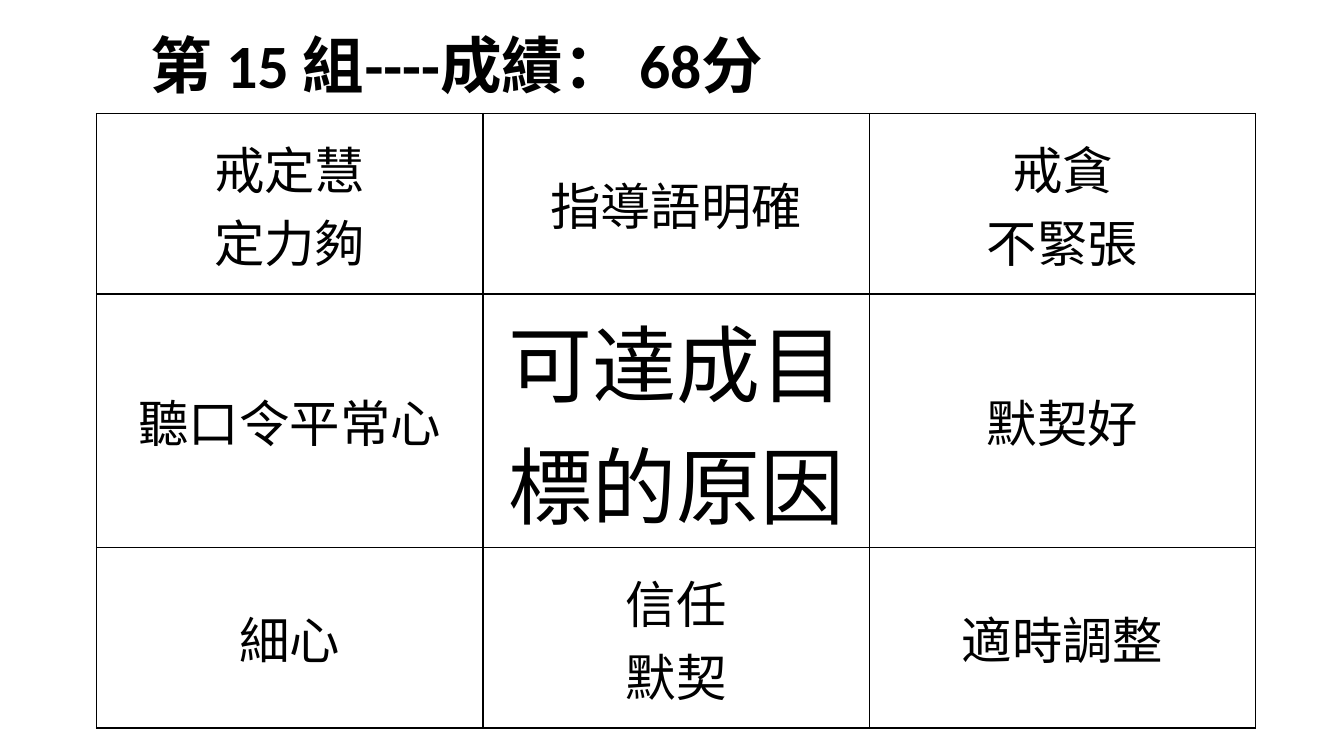
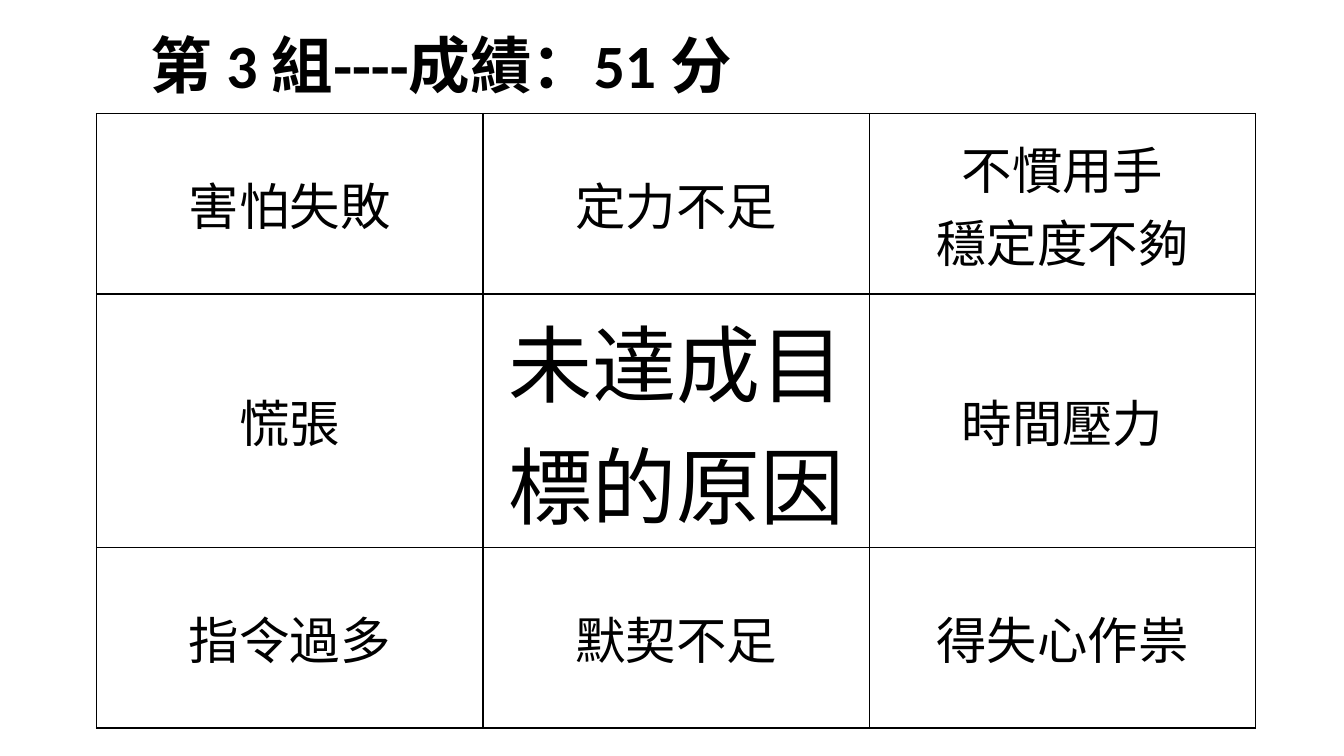
from lxml import etree
from pptx import Presentation
from pptx.dml.color import RGBColor
from pptx.enum.text import MSO_ANCHOR, MSO_AUTO_SIZE, PP_ALIGN
from pptx.oxml.ns import qn
from pptx.util import Pt

PX = 9525  # EMU per pixel, 96 pixels to the inch
BLACK = RGBColor(0x00, 0x00, 0x00)
LATIN_FONT = "Calibri"
CJK_FONT = "Noto Sans CJK TC"
TITLE_SIZE, REASON_SIZE, TOPIC_SIZE = 44, 36, 60
COLUMN_WIDTH = 368
ROW_HEIGHTS = [172, 193, 172]

# Each group: heading, then a 3 x 3 grid with the topic in the middle
GROUPS = [
    ("第 15 組----成績： 68分", [
        ["戒定慧\n定力夠", "指導語明確", "戒貪\n不緊張"],
        ["聽口令平常心", "可達成目標的原因", "默契好"],
        ["細心", "信任\n默契", "適時調整"],
    ]),
    ("第 3 組----成績：51 分", [
        ["害怕失敗", "定力不足", "不慣用手\n穩定度不夠"],
        ["慌張", "未達成目標的原因", "時間壓力"],
        ["指令過多", "默契不足", "得失心作祟"],
    ]),
]


def style_paragraph(paragraph, size, align, bold=False):
    paragraph.alignment = align
    font = paragraph.font
    font.size, font.bold, font.name = Pt(size), bold, LATIN_FONT
    font.color.rgb = BLACK
    defaults = paragraph._p.pPr.find(qn("a:defRPr"))
    etree.SubElement(defaults, qn("a:ea"), typeface=CJK_FONT)


def draw_borders(cell):
    properties = cell._tc.get_or_add_tcPr()
    for position, side in enumerate(("a:lnL", "a:lnR", "a:lnT", "a:lnB")):
        line = etree.Element(qn(side), w=str(Pt(1)))
        fill = etree.SubElement(line, qn("a:solidFill"))
        etree.SubElement(fill, qn("a:srgbClr"), val=str(BLACK))
        properties.insert(position, line)


prs = Presentation()
prs.slide_width, prs.slide_height = 1280 * PX, 720 * PX
title_only = prs.slide_layouts[5]

for heading, reasons in GROUPS:
    slide = prs.slides.add_slide(title_only)

    # Heading with group number and score
    title = slide.shapes.title
    title.left, title.top = 134 * PX, -4 * PX
    title.width, title.height = 1001 * PX, 139 * PX
    title.text = heading
    title.text_frame.auto_size = MSO_AUTO_SIZE.NONE
    title.text_frame.vertical_anchor = MSO_ANCHOR.MIDDLE
    heading_line = title.text_frame.paragraphs[0]
    heading_line.line_spacing = 0.9
    style_paragraph(heading_line, TITLE_SIZE, PP_ALIGN.LEFT, bold=True)

    # Grid of reasons around the topic
    grid = slide.shapes.add_table(
        3, 3, 92 * PX, 108 * PX, 3 * COLUMN_WIDTH * PX, sum(ROW_HEIGHTS) * PX
    ).table
    grid.first_row = grid.horz_banding = False
    for column in grid.columns:
        column.width = COLUMN_WIDTH * PX
    for r, (height, row) in enumerate(zip(ROW_HEIGHTS, reasons)):
        grid.rows[r].height = height * PX
        for c, reason in enumerate(row):
            cell = grid.cell(r, c)
            cell.text = reason
            cell.vertical_anchor = MSO_ANCHOR.MIDDLE
            cell.fill.background()
            draw_borders(cell)
            size = TOPIC_SIZE if r == c == 1 else REASON_SIZE
            for paragraph in cell.text_frame.paragraphs:
                style_paragraph(paragraph, size, PP_ALIGN.CENTER)

prs.save("out.pptx")
